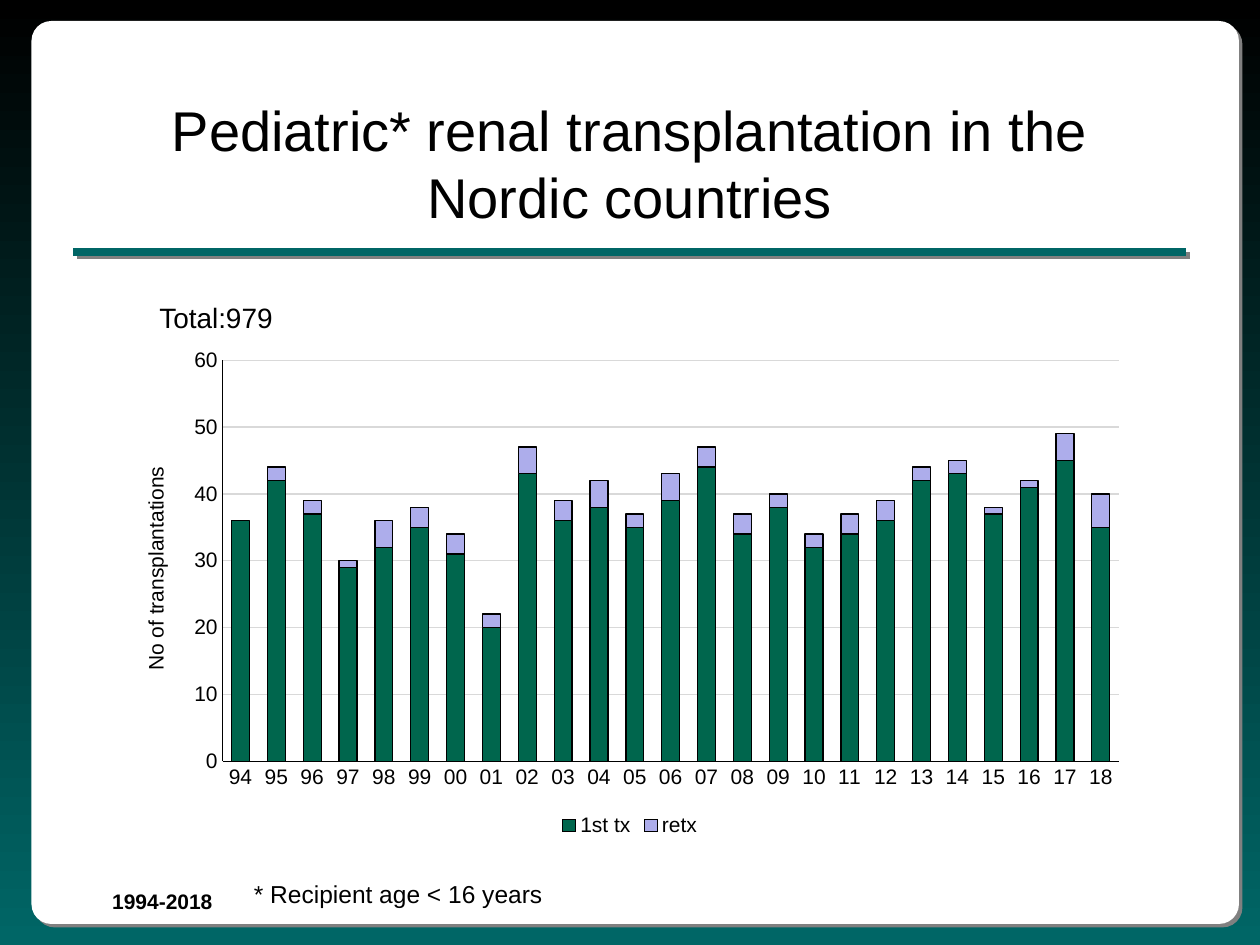
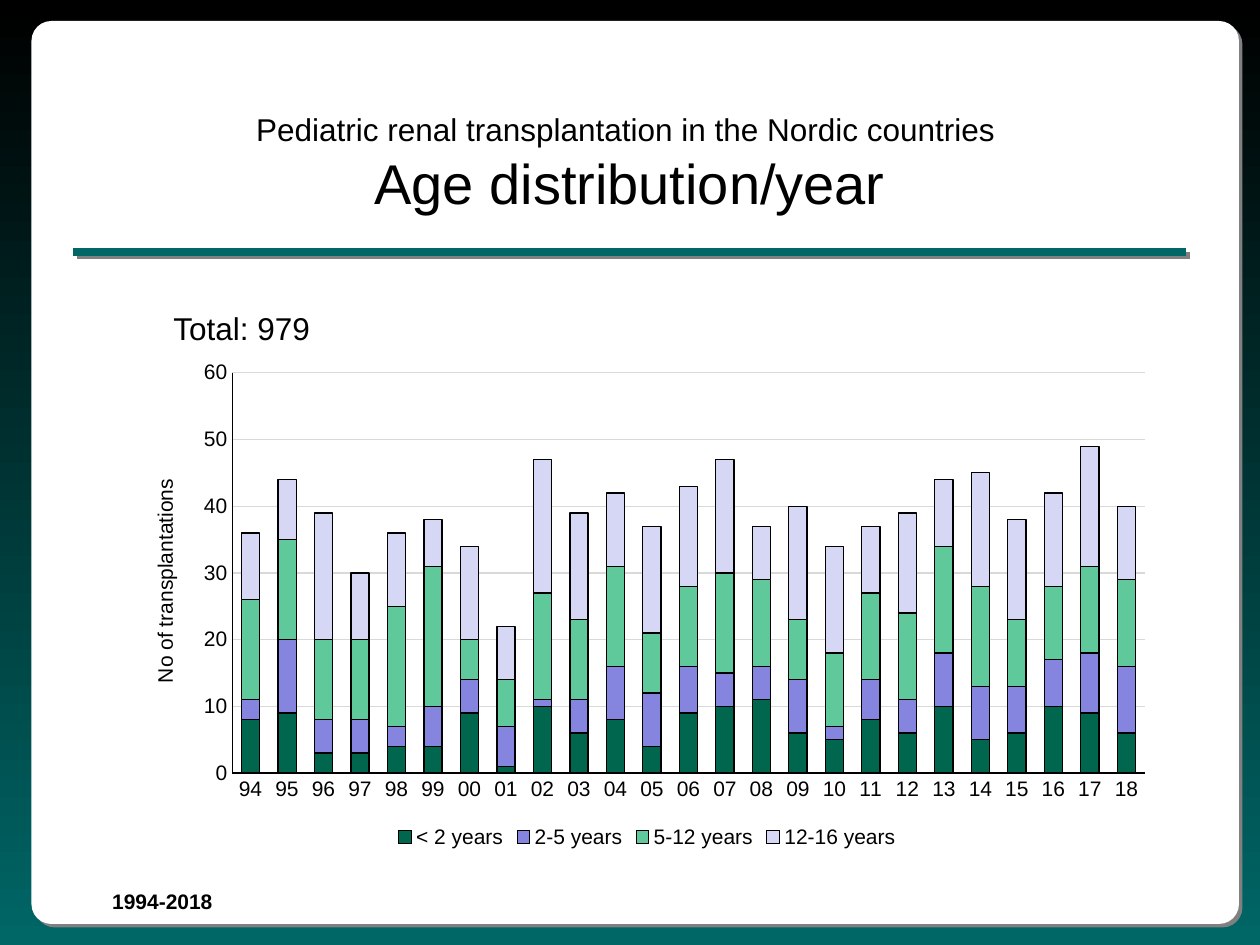
from dataclasses import dataclass

import lxml.etree
import pptx
import pptx.chart.data
import pptx.dml.color
import pptx.enum.chart
import pptx.enum.shapes
import pptx.enum.text
import pptx.oxml
import pptx.oxml.ns
import pptx.util

Pt = pptx.util.Pt
RGBColor = pptx.dml.color.RGBColor
Align = pptx.enum.text.PP_ALIGN
Anchor = pptx.enum.text.MSO_ANCHOR

BLACK = RGBColor(0x00, 0x00, 0x00)
WHITE = RGBColor(0xFF, 0xFF, 0xFF)
TEAL = RGBColor(0x00, 0x66, 0x66)
GRAY = RGBColor(0x80, 0x80, 0x80)
PALE = RGBColor(0xD9, 0xD9, 0xD9)
GREEN = RGBColor(0x00, 0x66, 0x4D)
MINT = RGBColor(0x60, 0xC9, 0x9C)
VIOLET = RGBColor(0x85, 0x85, 0xE0)
LILAC = RGBColor(0xAD, 0xAD, 0xEB)
MIST = RGBColor(0xD6, 0xD6, 0xF5)

FACE = "Arial"
YEARS = [f"{year % 100:02d}" for year in range(1994, 2019)]
PLOT = {"x": 0.1, "y": 0.04, "w": 0.88, "h": 0.8}


@dataclass
class Box:
    left: float
    top: float
    width: float
    height: float

    def place(self) -> tuple:
        return tuple(Pt(n) for n in (self.left, self.top, self.width, self.height))


@dataclass
class Run:
    text: str
    size: float


@dataclass
class Label:
    text: str
    box: Box
    size: float
    bold: bool = False


@dataclass
class Series:
    name: str
    color: RGBColor
    counts: list[int]


@dataclass
class Page:
    title: list[Run]
    box: Box
    series: list[Series]
    labels: list[Label]


CARD = Box(18, 12, 690, 516)
HEAD = Box(54, 48, 612, 90)
PERIOD = Label("1994-2018", Box(57, 504, 106, 22), 12, True)

PAGES = [
    Page(
        [Run("Pediatric* renal transplantation in the Nordic countries", 32)],
        Box(69, 194.4, 582, 286.5),
        [
            Series("1st tx", GREEN,
                   [36, 42, 37, 29, 32, 35, 31, 20, 43, 36, 38, 35, 39,
                    44, 34, 38, 32, 34, 36, 42, 43, 37, 41, 45, 35]),
            Series("retx", LILAC,
                   [0, 2, 2, 1, 4, 3, 3, 2, 4, 3, 4, 2, 4,
                    3, 3, 2, 2, 3, 3, 2, 2, 1, 1, 4, 5]),
        ],
        [
            Label("Total:979", Box(84, 168, 80, 26.5), 16),
            Label("* Recipient age < 16 years", Box(138, 499, 180, 24.5), 14),
        ],
    ),
    Page(
        [Run("Pediatric renal transplantation in the Nordic countries ", 18),
         Run("Age distribution/year", 32)],
        Box(73.5, 201.6, 592.5, 286),
        [
            Series("< 2 years", GREEN,
                   [8, 9, 3, 3, 4, 4, 9, 1, 10, 6, 8, 4, 9,
                    10, 11, 6, 5, 8, 6, 10, 5, 6, 10, 9, 6]),
            Series("2-5 years", VIOLET,
                   [3, 11, 5, 5, 3, 6, 5, 6, 1, 5, 8, 8, 7,
                    5, 5, 8, 2, 6, 5, 8, 8, 7, 7, 9, 10]),
            Series("5-12 years", MINT,
                   [15, 15, 12, 12, 18, 21, 6, 7, 16, 12, 15, 9, 12,
                    15, 13, 9, 11, 13, 13, 16, 15, 10, 11, 13, 13]),
            Series("12-16 years", MIST,
                   [10, 9, 19, 10, 11, 7, 14, 8, 20, 16, 11, 16, 15,
                    17, 8, 17, 16, 10, 15, 10, 17, 15, 14, 18, 11]),
        ],
        [Label("Total: 979", Box(92, 173, 94, 29), 18)],
    ),
]


def set_font(font, size: float, bold: bool = False) -> None:
    font.name = FACE
    font.size = Pt(size)
    font.bold = bold
    font.color.rgb = BLACK


def set_line(line, color: RGBColor, width: float = 0.75) -> None:
    line.color.rgb = color
    line.width = Pt(width)


def add_shade(shape) -> None:
    """Cast a hard gray shadow down and to the right."""
    space = pptx.oxml.ns.nsdecls("a")
    shape._element.spPr.append(pptx.oxml.parse_xml(
        f'<a:effectLst {space}><a:outerShdw blurRad="0" dist="{Pt(2.8)}" '
        f'dir="2700000" algn="ctr" rotWithShape="0">'
        f'<a:srgbClr val="{GRAY}"/></a:outerShdw></a:effectLst>'))


def draw_frame(slide) -> None:
    """Draw the backdrop, card and rule that all slides share."""
    fill = slide.background.fill
    fill.gradient()
    fill.gradient_angle = 270
    for stop, color in zip(fill.gradient_stops, (BLACK, TEAL)):
        stop.color.rgb = color

    card = slide.shapes.add_shape(
        pptx.enum.shapes.MSO_SHAPE.ROUNDED_RECTANGLE, *CARD.place())
    card.adjustments[0] = 0.022
    card.fill.solid()
    card.fill.fore_color.rgb = WHITE
    card.line.fill.background()
    add_shade(card)

    rule = slide.shapes.add_connector(
        pptx.enum.shapes.MSO_CONNECTOR.STRAIGHT, Pt(42), Pt(144), Pt(678), Pt(144))
    set_line(rule.line, TEAL, 4.5)
    add_shade(rule)


def draw_title(slide, runs: list[Run]) -> None:
    frame = slide.shapes.add_textbox(*HEAD.place()).text_frame
    frame.word_wrap = True
    frame.vertical_anchor = Anchor.MIDDLE
    para = frame.paragraphs[0]
    para.alignment = Align.CENTER
    set_font(para.font, runs[-1].size)
    for i, part in enumerate(runs):
        if i:
            para.add_line_break()
        run = para.add_run()
        run.text = part.text
        if part.size != runs[-1].size:
            run.font.size = Pt(part.size)


def draw_label(slide, label: Label) -> None:
    frame = slide.shapes.add_textbox(*label.box.place()).text_frame
    frame.word_wrap = False
    para = frame.paragraphs[0]
    para.text = label.text
    set_font(para.font, label.size, label.bold)


def fix_plot(chart) -> None:
    """Pin the inner plot area to a fixed share of the chart."""
    area = chart._chartSpace.chart.plotArea
    for old in area.findall(pptx.oxml.ns.qn("c:layout")):
        area.remove(old)
    space = pptx.oxml.ns.nsdecls("c")
    modes = '<c:xMode val="edge"/><c:yMode val="edge"/>'
    sides = "".join(f'<c:{key} val="{part}"/>' for key, part in PLOT.items())
    area.insert(0, pptx.oxml.parse_xml(
        f'<c:layout {space}><c:manualLayout><c:layoutTarget val="inner"/>'
        f'{modes}{sides}</c:manualLayout></c:layout>'))


def draw_chart(slide, box: Box, series: list[Series]) -> None:
    data = pptx.chart.data.CategoryChartData()
    data.categories = YEARS
    for item in series:
        data.add_series(item.name, item.counts)
    chart = slide.shapes.add_chart(
        pptx.enum.chart.XL_CHART_TYPE.COLUMN_STACKED, *box.place(), data).chart
    set_font(chart.font, 12)
    chart.has_title = False
    fix_plot(chart)

    plot = chart.plots[0]
    plot.gap_width = 100
    plot.overlap = 100
    plot.vary_by_categories = False
    for bar, item in zip(plot.series, series):
        bar.format.fill.solid()
        bar.format.fill.fore_color.rgb = item.color
        set_line(bar.format.line, BLACK)

    for axis in (chart.category_axis, chart.value_axis):
        axis.major_tick_mark = pptx.enum.chart.XL_TICK_MARK.NONE
        set_font(axis.tick_labels.font, 12)
        set_line(axis.format.line, BLACK)
    axis = chart.value_axis
    axis.minimum_scale, axis.maximum_scale, axis.major_unit = 0, 60, 10
    set_line(axis.major_gridlines.format.line, PALE)
    para = axis.axis_title.text_frame.paragraphs[0]
    para.text = "No of transplantations"
    set_font(para.font, 12)

    chart.has_legend = True
    chart.legend.position = pptx.enum.chart.XL_LEGEND_POSITION.BOTTOM
    chart.legend.include_in_layout = False
    set_font(chart.legend.font, 12)


def main() -> None:
    deck = pptx.Presentation()
    deck.slide_width, deck.slide_height = Pt(720), Pt(540)
    for page in PAGES:
        slide = deck.slides.add_slide(deck.slide_layouts[6])
        draw_frame(slide)
        draw_title(slide, page.title)
        draw_chart(slide, page.box, page.series)
        for label in [PERIOD, *page.labels]:
            draw_label(slide, label)
    deck.save("out.pptx")


if __name__ == "__main__":
    main()
